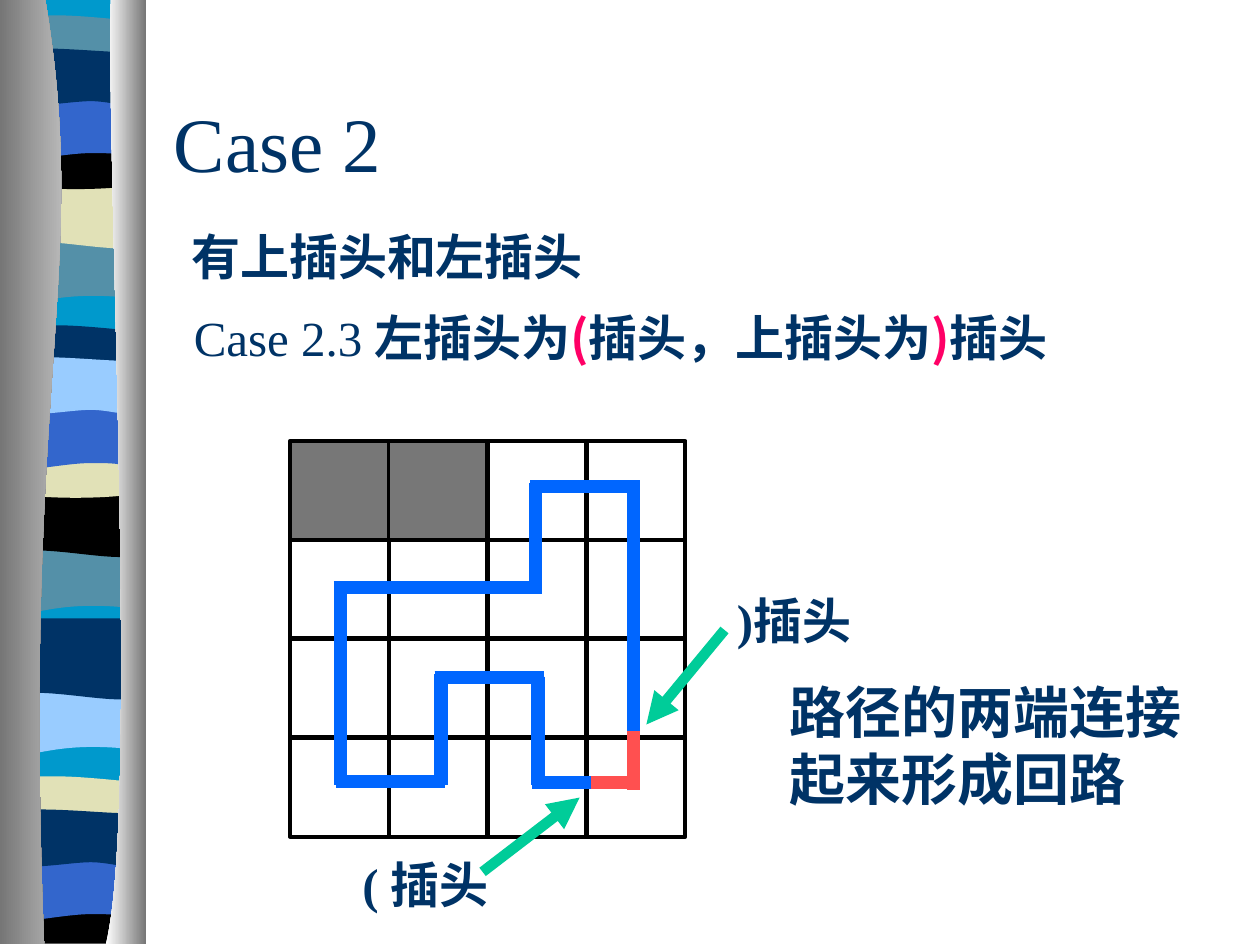
from lxml.etree import SubElement
from pptx import Presentation
from pptx.dml.color import RGBColor as RGB
from pptx.enum.shapes import MSO_CONNECTOR as CONN, MSO_SHAPE as SHAPE
from pptx.enum.text import MSO_ANCHOR as ANCHOR, PP_ALIGN as ALIGN
from pptx.oxml.ns import qn
from pptx.util import Inches, Pt

C = {"navy": "003366", "cyan": "0099CC", "teal": "5490A8", "sand": "E1E1B7",
     "black": "000000", "royal": "3366CC", "sky": "99CCFF", "gray": "777777",
     "red": "FF5050", "blue": "0066FF", "green": "00CC99", "pink": "FF0066",
     "shade": "767676", "light": "D8D8D8", "white": "FFFFFF"}
C = {name: RGB.from_string(value) for name, value in C.items()}
LATIN, CJK = "Times New Roman", "Noto Sans CJK SC"

prs = Presentation()
prs.slide_width, prs.slide_height = Inches(10), Inches(7.5)
s = prs.slides.add_slide(prs.slide_layouts[5])


def add_outline(points, top=0, stretch=1):
    """Draw a closed outline; a six-number entry is a Bezier curve."""
    pairs = [(pt[i], pt[i + 1]) for pt in points for i in range(0, len(pt), 2)]
    ys = [y for _, y in pairs]
    middle = (min(ys) + max(ys)) / 2
    trace = [(Inches(x), Inches(top + middle + (y - middle) * stretch)) for x, y in pairs]
    fb = s.shapes.build_freeform(*trace[0])
    fb.add_line_segments(trace[1:], close=True)
    sp = fb.convert_to_shape()
    # Join each three line steps of a curve into one Bezier step
    steps = iter(list(sp._element.iter(qn("a:lnTo"))))
    for pt in points[1:]:
        step = next(steps)
        if len(pt) == 6:
            step.tag = qn("a:cubicBezTo")
            for _ in range(2):
                extra = next(steps)
                step.append(extra[0])
                extra.getparent().remove(extra)
    sp.shadow.inherit = False
    sp.line.fill.background()
    return sp


def add_line(x1, y1, x2, y2, color, width, arrow=False):
    cx = s.shapes.add_connector(CONN.STRAIGHT, *map(Inches, (x1, y1, x2, y2)))
    cx.line.color.rgb, cx.line.width = C[color], Pt(width)
    if arrow:
        SubElement(cx.line._get_or_add_ln(), qn("a:tailEnd"), type="triangle")
    SubElement(cx._element.spPr, qn("a:effectLst"))


# Striped ribbon: band outlines, measured from the top of each band
BANDS = {
    "ripple": [(1.14, 0), (1.14, 0.47), (0.39, 0.39, 0.24, 0.55, 0.05, 0.47), (0.05, 0)],
    "swell": [(1.14, 0), (1.14, 0.47), (0.96, 0.55, 0.39, 0.41, 0.06, 0.47), (0.06, 0)],
    "lens": [(1.14, 0.05), (1.14, 0.29), (0.96, 0.34, 0.24, 0.34, 0.05, 0.29), (0.05, 0.05),
             (0.12, 0, 0.29, 0.01, 0.47, 0.01), (0.65, 0.01, 1, 0.04, 1.14, 0.05)],
    "bowl": [(1.14, 0), (1.14, 0.33), (0.96, 0.38, 0.24, 0.38, 0.06, 0.33), (0.06, 0),
             (0.72, 0.05, 0.91, 0, 1.14, 0)],
    "arch": [(1.14, 0), (1.14, 0.47), (0.97, 0.42, 0.9, 0.42, 0.72, 0.42),
             (0.54, 0.42, 0.22, 0.47, 0.06, 0.47), (0.06, 0)],
    "flag": [(1.14, 0.05), (1.14, 0.35), (1.07, 0.41, 0.9, 0.35, 0.72, 0.35),
             (0.54, 0.35, 0.17, 0.41, 0.05, 0.35), (0.05, 0.05),
             (0.21, 0, 0.79, 0.05, 0.97, 0.05), (1.14, 0.05)],
    "foot": [(1.14, 0), (1.14, 0.37), (0.06, 0.37), (0.06, 0), (0.72, 0.05, 0.91, 0, 1.14, 0)],
    "base": [(1.14, 0), (1.14, 7.48), (0.06, 7.48), (0.06, 0)],
}
for band, color, top in [
        ("base", "cyan", 0),
        ("ripple", "teal", 1.85), ("swell", "sand", 1.41), ("lens", "teal", 0.16),
        ("bowl", "black", 1.08), ("arch", "royal", 0.74), ("flag", "navy", 0.41),
        ("ripple", "teal", 4.31), ("swell", "black", 3.86), ("lens", "navy", 2.62),
        ("bowl", "sand", 3.53), ("arch", "royal", 3.2), ("flag", "sky", 2.86),
        ("ripple", "sky", 5.43), ("swell", "navy", 4.99), ("lens", "sand", 6.2),
        ("foot", "black", 7.12), ("arch", "royal", 6.78), ("flag", "navy", 6.45)]:
    sp = add_outline(BANDS[band], top, 1 if band in ("base", "foot") else 1.3)
    sp.fill.solid()
    sp.fill.fore_color.rgb = C[color]

# Shaded edges on both sides of the ribbon
for points, colors in [
        ([(0.36, 0), (0.72, 2.16, 0.17, 2.96, 0.35, 7.49), (0, 7.49), (0, 0)],
         ("shade", "light")),
        ([(0.88, 0), (0.84, 1.25, 1.11, 6.46, 0.84, 7.49), (1.16, 7.49), (1.16, 0)],
         ("white", "shade"))]:
    sp = add_outline(points)
    sp.fill.gradient()
    sp.fill.gradient_angle = 0
    for stop, color in zip(sp.fill.gradient_stops, colors):
        stop.color.rgb = C[color]

# Grid with two blocked cells
cell, pitch, grid_left, grid_top = 0.79, 2.35 / 3, 2.3, 3.5
for row in range(4):
    for col in range(4):
        sp = s.shapes.add_shape(SHAPE.RECTANGLE, Inches(grid_left + col * pitch),
                                Inches(grid_top + row * pitch), Inches(cell), Inches(cell))
        sp.shadow.inherit = False
        sp.line.color.rgb, sp.line.width = C["black"], Pt(2.25)
        if row == 0 and col < 2:
            sp.fill.solid()
            sp.fill.fore_color.rgb = C["gray"]
        else:
            sp.fill.background()

# Closed red loop, then the blue path that leaves its joint open
for color, right_end, bottom_end in [("red", 6.27, 5.08), ("blue", 5.8, 4.69)]:
    for ends in [(2.7, 4.65, 2.7, 6.23), (2.65, 4.66, 4.3, 4.66), (4.25, 3.83, 4.25, 4.7),
                 (4.21, 3.86, 5.08, 3.86), (5.03, 3.83, 5.03, right_end),
                 (4.22, 6.21, bottom_end, 6.21), (4.27, 5.37, 4.27, 6.23),
                 (3.45, 5.38, 4.32, 5.38), (3.5, 5.35, 3.5, 6.23), (2.67, 6.2, 3.53, 6.2)]:
        add_line(*ends, color, 7.5)

# Arrows to the two plugs
add_line(5.75, 5, 5.13, 5.75, "green", 6, arrow=True)
add_line(3.83, 6.92, 4.6, 6.33, "green", 6, arrow=True)

# Title and texts: box, size, runs of (text, font, colour, bold)
texts = [
    ((1.28, 0.5, 8.5, 1.25), 44, [("Case 2", LATIN, "navy", False)]),
    ((1.42, 1.75, 7.92, 0.57), 28, [("有上插头和左插头", CJK, "navy", True)]),
    ((1.44, 2.39, 7.73, 0.57), 28, [
        ("Case 2.3 ", LATIN, "navy", False), ("左插头为", CJK, "navy", True),
        ("(", CJK, "pink", True), ("插头，上插头为", CJK, "navy", True),
        (")", CJK, "pink", True), ("插头", CJK, "navy", True)]),
    ((2.68, 6.73, 1.58, 0.57), 28, [(" ( 插头", LATIN, "navy", True)]),
    ((5.75, 4.64, 1.58, 0.57), 28, [(")插头", LATIN, "navy", True)]),
    ((6.17, 5.33, 3.5, 1.17), 32, [("路径的两端连接起来形成回路", LATIN, "navy", True)]),
]
for i, (box, size, runs) in enumerate(texts):
    box = [Inches(v) for v in box]
    if i == 0:
        sp = s.shapes.title
        sp.left, sp.top, sp.width, sp.height = box
    else:
        sp = s.shapes.add_textbox(*box)
    tf = sp.text_frame
    tf.word_wrap = True
    tf.vertical_anchor = ANCHOR.MIDDLE if i == 0 else ANCHOR.TOP
    p = tf.paragraphs[0]
    p.alignment = ALIGN.LEFT
    for text, font, color, bold in runs:
        r = p.add_run()
        r.text = text
        for name, value in {"name": font, "size": Pt(size), "bold": bold}.items():
            setattr(r.font, name, value)
        r.font.color.rgb = C[color]
        SubElement(r.font._element, qn("a:ea"), typeface=CJK)

prs.save("out.pptx")
